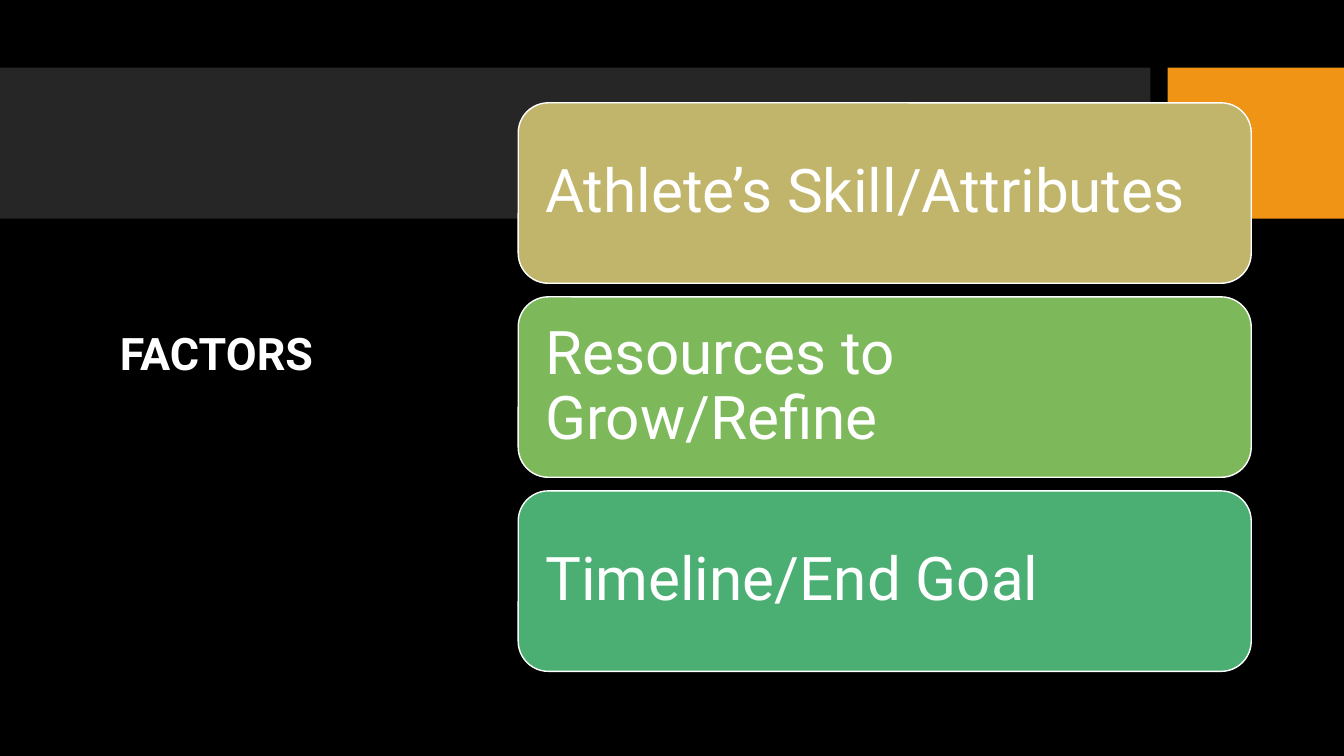
from pptx import Presentation
from pptx.dml.color import RGBColor as RGB
from pptx.enum.shapes import MSO_SHAPE as Kind
from pptx.enum.text import MSO_ANCHOR as Anchor, PP_ALIGN as Align
from pptx.util import Inches, Pt

BLACK = RGB(0x00, 0x00, 0x00)
WHITE = RGB(0xFF, 0xFF, 0xFF)
GREY = RGB(0x26, 0x26, 0x26)
ORANGE = RGB(0xF0, 0x94, 0x15)
SAND = RGB(0xC1, 0xB5, 0x6B)
LIME = RGB(0x7D, 0xB9, 0x5A)
JADE = RGB(0x4B, 0xAF, 0x73)

WIDE, HIGH = 13.33, 7.5
FACTORS = [
    ("Athlete’s Skill/Attributes", SAND),
    ("Resources to Grow/Refine", LIME),
    ("Timeline/End Goal", JADE),
]


def add_block(slide, kind, box, fill):
    block = slide.shapes.add_shape(kind, *map(Inches, box))
    block.shadow.inherit = False
    block.fill.solid()
    block.fill.fore_color.rgb = fill
    block.line.fill.background()
    return block


def write(shape, text, size, bold, pad):
    frame = shape.text_frame
    sides = {"margin_" + side: Inches(pad[i % 2])
             for i, side in enumerate(("left", "top", "right", "bottom"))}
    layout = {"word_wrap": True, "vertical_anchor": Anchor.MIDDLE, **sides}
    for name, value in layout.items():
        setattr(frame, name, value)
    line = frame.paragraphs[0]
    line.text = text
    line.alignment = Align.LEFT
    line.line_spacing = 0.9
    style = {"name": "Roboto", "size": Pt(size), "bold": bold}
    for name, value in style.items():
        setattr(line.font, name, value)
    line.font.color.rgb = WHITE


def add_band(slide, box):
    left, top, width, height = box
    tab, gap = 1.75, 0.17
    add_block(slide, Kind.RECTANGLE, (left, top, width - tab - gap, height), GREY)
    add_block(slide, Kind.RECTANGLE, (left + width - tab, top, tab, height), ORANGE)


def add_title(slide, box, text):
    title = slide.shapes.add_textbox(*map(Inches, box))
    write(title, text, 32, True, (0.1, 0.05))


def add_cards(slide, box, cards):
    left, top, width, height = box
    tall = 1.79
    step = (height - tall) / (len(cards) - 1)
    for row, (text, fill) in enumerate(cards):
        spot = (left, top + row * step, width, tall)
        card = add_block(slide, Kind.ROUNDED_RECTANGLE, spot, fill)
        card.line.color.rgb = WHITE
        card.line.width = Pt(1)
        write(card, text, 43, False, (0.18, 0.18))


def main():
    deck = Presentation()
    deck.slide_width, deck.slide_height = Inches(WIDE), Inches(HIGH)
    slide = deck.slides.add_slide(deck.slide_layouts[6])
    back = slide.background.fill
    back.solid()
    back.fore_color.rgb = BLACK
    add_band(slide, (0, 0.67, WIDE, 1.5))
    add_title(slide, (1.09, 2.55, 3.85, 1.96), "FACTORS")
    add_cards(slide, (5.14, 1.02, 7.27, 5.64), FACTORS)
    deck.save("out.pptx")


if __name__ == "__main__":
    main()
